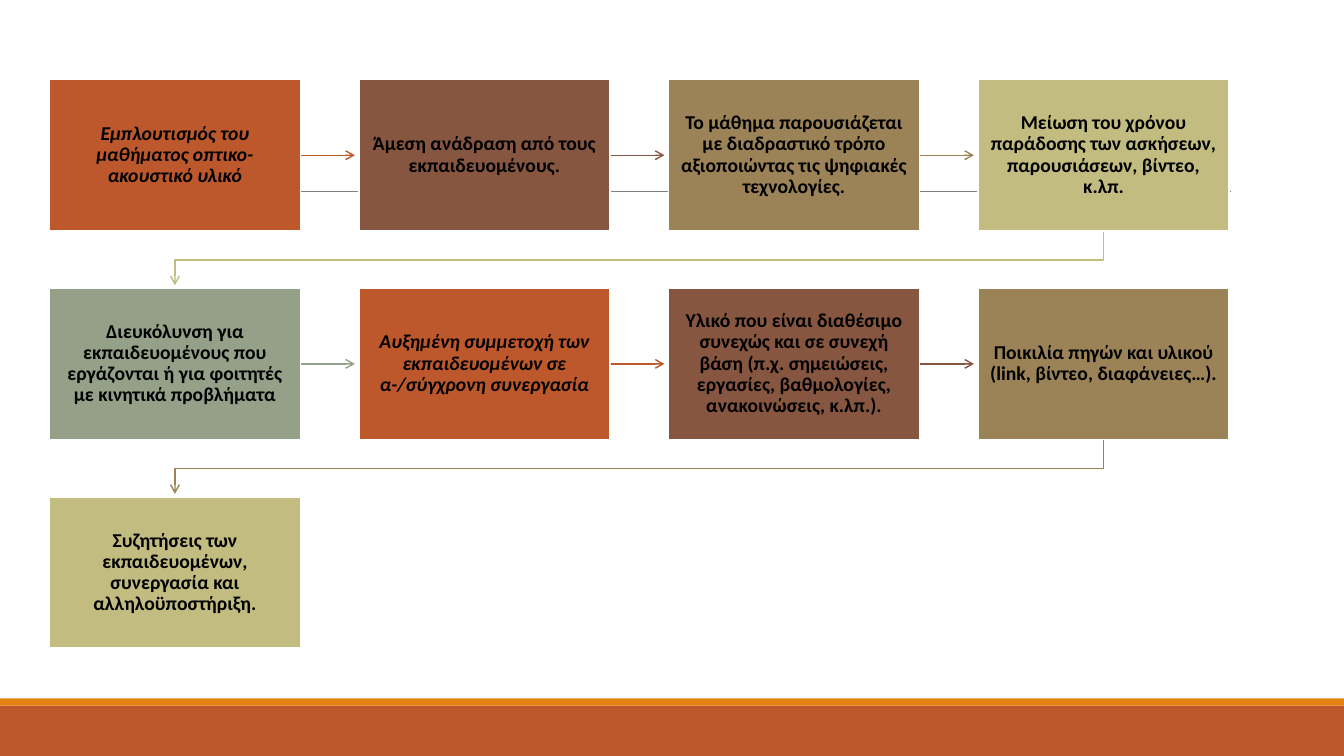
from dataclasses import dataclass

from lxml import etree
from pptx import Presentation
from pptx import util as u
from pptx.dml.color import RGBColor
from pptx.enum import shapes, text
from pptx.oxml.ns import qn


@dataclass(frozen=True)
class Theme:
    font: str = "Calibri"
    size: int = 14
    ink: str = "000000"
    edge: str = "FFFFFF"
    band: str = "BD582C"
    stripe: str = "E48312"
    rule: str = "808080"
    steps: tuple = ("BD582C", "865640", "9B8357", "C2BC80", "94A088")


class SlideBuilder:
    def __init__(self, page, theme):
        self.page = page
        self.theme = theme

    def style_line(self, line, color, width, arrow=False):
        line.color.rgb = RGBColor.from_string(color)
        line.width = u.Pt(width)
        if arrow:
            line_xml = line.color._xFill.getparent()
            etree.SubElement(line_xml, qn("a:tailEnd"), type="arrow")

    def rectangle(self, left, top, width, height, fill, edge=None):
        box = self.page.shapes.add_shape(
            shapes.MSO_SHAPE.RECTANGLE, *map(u.Inches, (left, top, width, height)))
        box.shadow.inherit = False
        box.fill.solid()
        box.fill.fore_color.rgb = RGBColor.from_string(fill)
        if edge:
            self.style_line(box.line, edge, 1.25)
        else:
            box.line.fill.background()
        return box

    def step(self, left, top, width, height, fill, words, italic):
        box = self.rectangle(left, top, width, height, fill, self.theme.edge)
        frame = box.text_frame
        frame_format = {
            "word_wrap": True, "vertical_anchor": text.MSO_ANCHOR.MIDDLE,
            "margin_left": u.Inches(0.12), "margin_right": u.Inches(0.12),
            "margin_top": u.Inches(0.13), "margin_bottom": u.Inches(0.13)}
        for name, value in frame_format.items():
            setattr(frame, name, value)
        para = frame.paragraphs[0]
        para.alignment = text.PP_ALIGN.CENTER
        para.line_spacing = 0.9
        span = para.add_run()
        span.text = words
        font_format = {"name": self.theme.font, "size": u.Pt(self.theme.size),
                       "bold": True, "italic": italic}
        for name, value in font_format.items():
            setattr(span.font, name, value)
        span.font.color.rgb = RGBColor.from_string(self.theme.ink)

    def straight(self, start, end, y, color, width, arrow=False):
        line = self.page.shapes.add_connector(
            shapes.MSO_CONNECTOR.STRAIGHT, *map(u.Inches, (start, y, end, y)))
        self.style_line(line.line, color, width, arrow)
        etree.SubElement(line._element.spPr, qn("a:effectLst"))

    def bent_arrow(self, points, color):
        start, *others = [tuple(map(u.Inches, point)) for point in points]
        outline = self.page.shapes.build_freeform(*start)
        outline.add_line_segments(others, close=False)
        arrow = outline.convert_to_shape()
        arrow.shadow.inherit = False
        arrow.fill.background()
        self.style_line(arrow.line, color, 1, arrow=True)


# Step texts in reading order, with italic flag
STEPS = [
    ("Εμπλουτισμός του μαθήματος οπτικο-ακουστικό υλικό", True),
    ("Άμεση ανάδραση από τους εκπαιδευομένους.", False),
    ("Το μάθημα παρουσιάζεται με διαδραστικό τρόπο αξιοποιώντας τις ψηφιακές "
     "τεχνολογίες.", False),
    ("Μείωση του χρόνου παράδοσης των ασκήσεων, παρουσιάσεων, βίντεο, κ.λπ.", False),
    ("Διευκόλυνση για εκπαιδευομένους που εργάζονται ή για φοιτητές με κινητικά "
     "προβλήματα", False),
    ("Αυξημένη συμμετοχή των εκπαιδευομένων σε α-/σύγχρονη συνεργασία", True),
    ("Υλικό που είναι διαθέσιμο συνεχώς και σε συνεχή βάση (π.χ. σημειώσεις, "
     "εργασίες, βαθμολογίες, ανακοινώσεις, κ.λπ.).", False),
    ("Ποικιλία πηγών και υλικού (link, βίντεο, διαφάνειες…).", False),
    ("Συζητήσεις των εκπαιδευομένων, συνεργασία και αλληλοϋποστήριξη.", False),
]

# Grid of steps
COLUMNS = 4
LEFT, TOP = 0.49, 0.79
WIDTH, HEIGHT = 2.49, 1.5
PITCH_X, PITCH_Y = 3.07, 2.07
GAP = 0.54


def main():
    theme = Theme()
    deck = Presentation()
    deck.slide_width, deck.slide_height = u.Inches(13.33), u.Inches(7.5)
    page = deck.slides.add_slide(deck.slide_layouts[6])
    builder = SlideBuilder(page, theme)

    # Footer bands and rule behind the steps
    builder.rectangle(0, 7, 13.33, 0.5, theme.band)
    builder.rectangle(0, 6.93, 13.33, 0.07, theme.stripe)
    builder.straight(1.31, 12.21, 1.9, theme.rule, 0.5)

    # Steps, each followed by an arrow to the next one
    for index, (words, italic) in enumerate(STEPS):
        row, column = divmod(index, COLUMNS)
        left, top = LEFT + column * PITCH_X, TOP + row * PITCH_Y
        color = theme.steps[index % len(theme.steps)]
        right, bottom = left + WIDTH, top + HEIGHT
        if index < len(STEPS) - 1:
            if column < COLUMNS - 1:
                builder.straight(right, right + GAP, top + HEIGHT / 2, color, 1, True)
            else:
                start, end = left + WIDTH / 2, LEFT + WIDTH / 2
                turn = bottom + 0.29
                builder.bent_arrow([(start, bottom), (start, turn), (end, turn),
                                    (end, bottom + GAP)], color)
        builder.step(left, top, WIDTH, HEIGHT, color, words, italic)

    deck.save("out.pptx")


if __name__ == "__main__":
    main()
